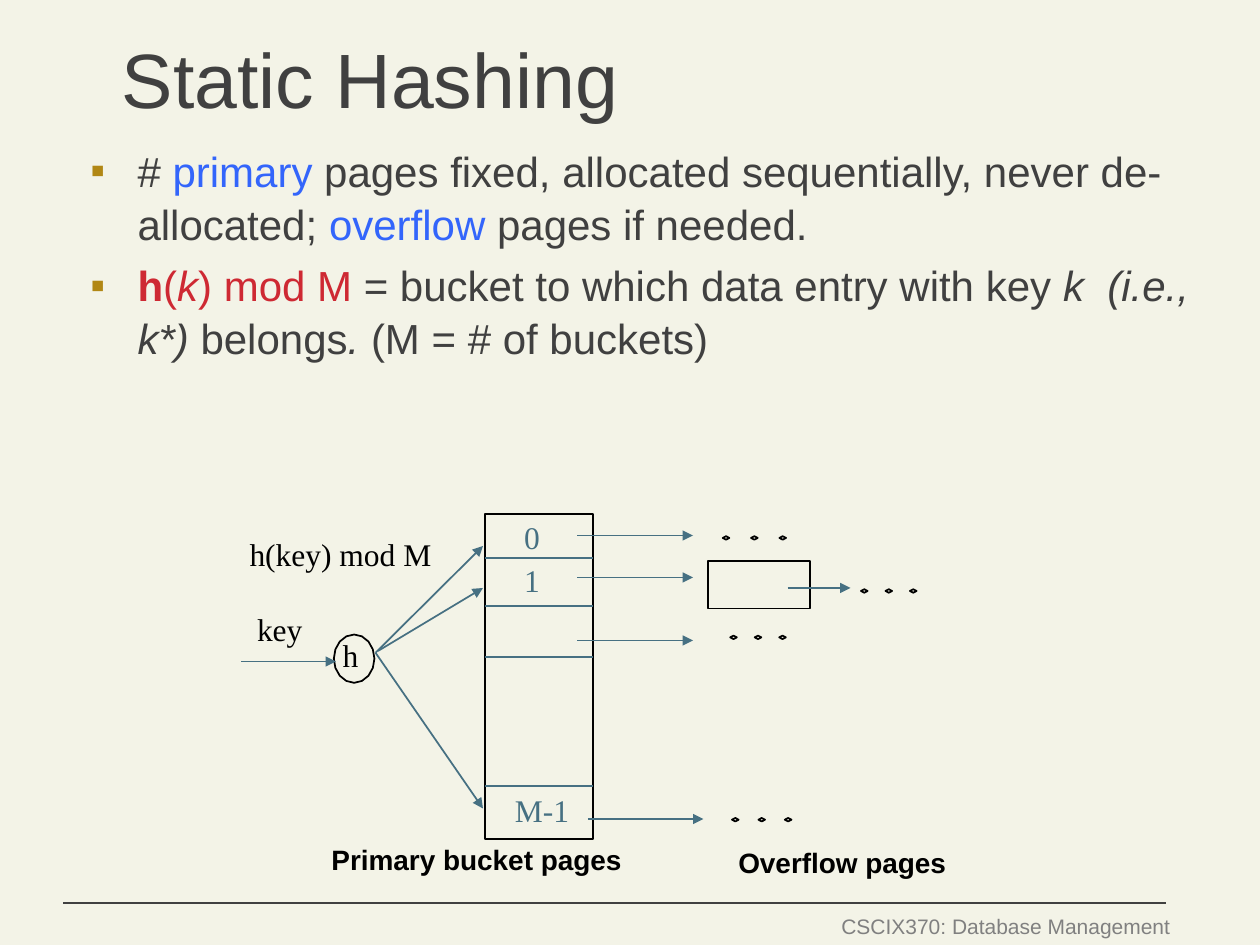
from math import cos, pi, sin

from lxml.etree import SubElement
from pptx import Presentation
from pptx.dml.color import RGBColor
from pptx.enum.shapes import MSO_CONNECTOR as Connector, MSO_SHAPE as Preset
from pptx.enum.text import MSO_ANCHOR as Anchor, MSO_AUTO_SIZE as AutoSize, PP_ALIGN as Align
from pptx.oxml.ns import qn
from pptx.util import Pt

CREAM = RGBColor(0xF3, 0xF3, 0xE7)
CHARCOAL = RGBColor(0x40, 0x40, 0x40)
GRAY = RGBColor(0x80, 0x80, 0x80)
BLACK = RGBColor(0, 0, 0)
TEAL = RGBColor(0x46, 0x70, 0x82)
BLUE = RGBColor(0x33, 0x65, 0xFB)
RED = RGBColor(0xCE, 0x29, 0x33)
GOLD = RGBColor(0xB1, 0x87, 0x14)
SANS, SERIF = "Arial", "Times New Roman"


class Sketch:
    """Draws styled elements on one slide; all lengths are in points."""

    margin = 3.6
    dot_width, dot_height = 3.8, 2

    def __init__(self, page):
        self.page = page
        self.shapes = page.shapes
        fill = page.background.fill
        fill.solid()
        fill.fore_color.rgb = CREAM

    def place(self, box, left, top, width, height):
        box.left, box.top, box.width, box.height = map(Pt, (left, top, width, height))

    def frame(self, box, anchor=Anchor.TOP, wrap=True, fit=AutoSize.NONE):
        frame = box.text_frame
        frame.margin_left = frame.margin_right = Pt(self.margin)
        frame.margin_top = frame.margin_bottom = Pt(self.margin)
        frame.vertical_anchor = anchor
        frame.word_wrap = wrap
        frame.auto_size = fit
        return frame

    def style(self, font, size, color, name=SANS, bold=False):
        font.size, font.name, font.bold = Pt(size), name, bold
        font.color.rgb = color

    def title(self, text, *area):
        box = self.shapes.title
        self.place(box, *area)
        para = self.frame(box, Anchor.MIDDLE).paragraphs[0]
        para.text = text
        para.alignment = Align.LEFT
        para.line_spacing = 0.9
        self.style(para.font, 44, CHARCOAL)

    def bullets(self, items, *area):
        box = self.page.placeholders[1]
        self.place(box, *area)
        frame = self.frame(box)
        for index, item in enumerate(items):
            para = frame.paragraphs[0] if index == 0 else frame.add_paragraph()
            para.line_spacing = 1.05
            para.space_before = Pt(5 if index else 0)
            self.bullet(para)
            self.style(para.font, 24, CHARCOAL)
            for text, color, bold, italic in item:
                span = para.add_run()
                span.text = text
                span.font.color.rgb = color
                span.font.bold, span.font.italic = bold, italic

    def bullet(self, para):
        props = para._p.get_or_add_pPr()
        props.set("marL", str(Pt(27)))
        props.set("indent", str(-Pt(27)))
        SubElement(SubElement(props, qn("a:buClr")), qn("a:srgbClr")).set("val", str(GOLD))
        SubElement(props, qn("a:buFont")).set("typeface", SANS)
        SubElement(props, qn("a:buChar")).set("char", "▪")

    def label(self, text, left, top, width, height, size=18, color=BLACK,
              name=SERIF, bold=False, align=Align.LEFT):
        box = self.shapes.add_textbox(*map(Pt, (left, top, width, height)))
        para = self.frame(box, wrap=False, fit=AutoSize.SHAPE_TO_FIT_TEXT).paragraphs[0]
        para.text = text
        para.alignment = align
        self.style(para.font, size, color, name, bold)

    def outline(self, shape):
        shape.shadow.inherit = False
        shape.fill.background()
        shape.line.color.rgb = BLACK
        shape.line.width = Pt(1)

    def rectangle(self, *area):
        self.outline(self.shapes.add_shape(Preset.RECTANGLE, *map(Pt, area)))

    def polygon(self, x, y, width, height, sides):
        """Closed outline with evenly spaced corners around the centre x, y."""
        angles = [2 * pi * step / sides for step in range(sides)]
        points = [(Pt(x + width / 2 * cos(a)), Pt(y + height / 2 * sin(a))) for a in angles]
        builder = self.shapes.build_freeform(*points[0])
        builder.add_line_segments(points[1:], close=True)
        self.outline(builder.convert_to_shape())

    def dots(self, x, y, gap):
        for step in range(3):
            self.polygon(x + step * gap, y, self.dot_width, self.dot_height, 4)

    def line(self, x1, y1, x2, y2, color=TEAL, width=1, arrow=False):
        line = self.shapes.add_connector(Connector.STRAIGHT, *map(Pt, (x1, y1, x2, y2)))
        line.line.color.rgb = color
        line.line.width = Pt(width)
        if arrow:
            SubElement(line.line._get_or_add_ln(), qn("a:tailEnd")).set("type", "triangle")
        SubElement(line._element.spPr, qn("a:effectLst"))


def main():
    deck = Presentation()
    deck.slide_width, deck.slide_height = Pt(720), Pt(540)
    sketch = Sketch(deck.slides.add_slide(deck.slide_layouts[1]))

    # Footer
    sketch.line(666, 516, 36, 516, CHARCOAL, 0.75)
    sketch.label("CSCIX370: Database Management", 475.9, 518.4, 196.6, 20.9,
                 12, GRAY, SANS, align=Align.RIGHT)

    # Title and bullets
    sketch.title("Static Hashing", 66, 12, 612, 72)
    sketch.bullets([
        [("# ", CHARCOAL, False, False),
         ("primary", BLUE, False, False),
         (" pages fixed, allocated sequentially, never de-allocated; ", CHARCOAL, False, False),
         ("overflow", BLUE, False, False),
         (" pages if needed.", CHARCOAL, False, False)],
        [("h", RED, True, False),
         ("(", RED, False, False),
         ("k", RED, False, True),
         (") mod M ", RED, False, False),
         ("= bucket to which data entry with key", CHARCOAL, False, False),
         (" k  (i.e., k*) ", CHARCOAL, False, True),
         ("belongs", CHARCOAL, False, False),
         (". ", CHARCOAL, False, True),
         ("(M = # of buckets)", CHARCOAL, False, False)],
    ], 48, 78, 636, 174)

    # Overflow page, hash node and primary buckets
    sketch.rectangle(404.6, 320.4, 58.3, 27.4)
    sketch.polygon(202.4, 376.4, 23.2, 27.6, 16)
    bucket_left, bucket_width = 277.2, 61.8
    sketch.rectangle(bucket_left, 293.8, bucket_width, 185.6)

    # Continuation dots
    for x, y, gap in [(414.9, 307.4, 16.2), (493.9, 337.7, 14),
                      (419.2, 364.2, 14), (420.2, 468.4, 15.1)]:
        sketch.dots(x, y, gap)

    # Labels
    sketch.label("h(key) mod M", 139, 302.4, 112.3, 27.4)
    sketch.label("h", 192.2, 360, 17.3, 27.4)
    sketch.label("key", 143.3, 344.9, 33.8, 27.4)
    for text, left, top, width in [("1", 296, 316.8, 17.3), ("0", 296, 292.3, 17.3),
                                   ("M-1", 290.6, 448.6, 38.9)]:
        sketch.label(text, left, top, width, 27.4, color=TEAL)
    for text, left, top, width in [("Primary bucket pages", 185.8, 478.1, 174.2),
                                   ("Overflow pages", 418.3, 479.5, 127.4)]:
        sketch.label(text, left, top, width, 24.5, 16, name=SANS, bold=True)

    # Arrows from key through the hash node to the buckets
    sketch.line(138, 378, 192, 378, arrow=True)
    for x, y, target in [(216, 372, 336), (214.6, 373, 312), (214.6, 373, 462)]:
        sketch.line(x, y, 276, target, arrow=True)

    # Arrows to the overflow pages
    for x, y, length in [(330, 306, 66), (330, 330, 66), (330, 366, 66),
                         (336, 468, 66), (450, 336, 36)]:
        sketch.line(x, y, x + length, y, arrow=True)

    # Bucket dividers
    for y in (318.8, 346.4, 375.6, 449.2):
        sketch.line(bucket_left, y, bucket_left + bucket_width, y)

    deck.save("out.pptx")


if __name__ == "__main__":
    main()
